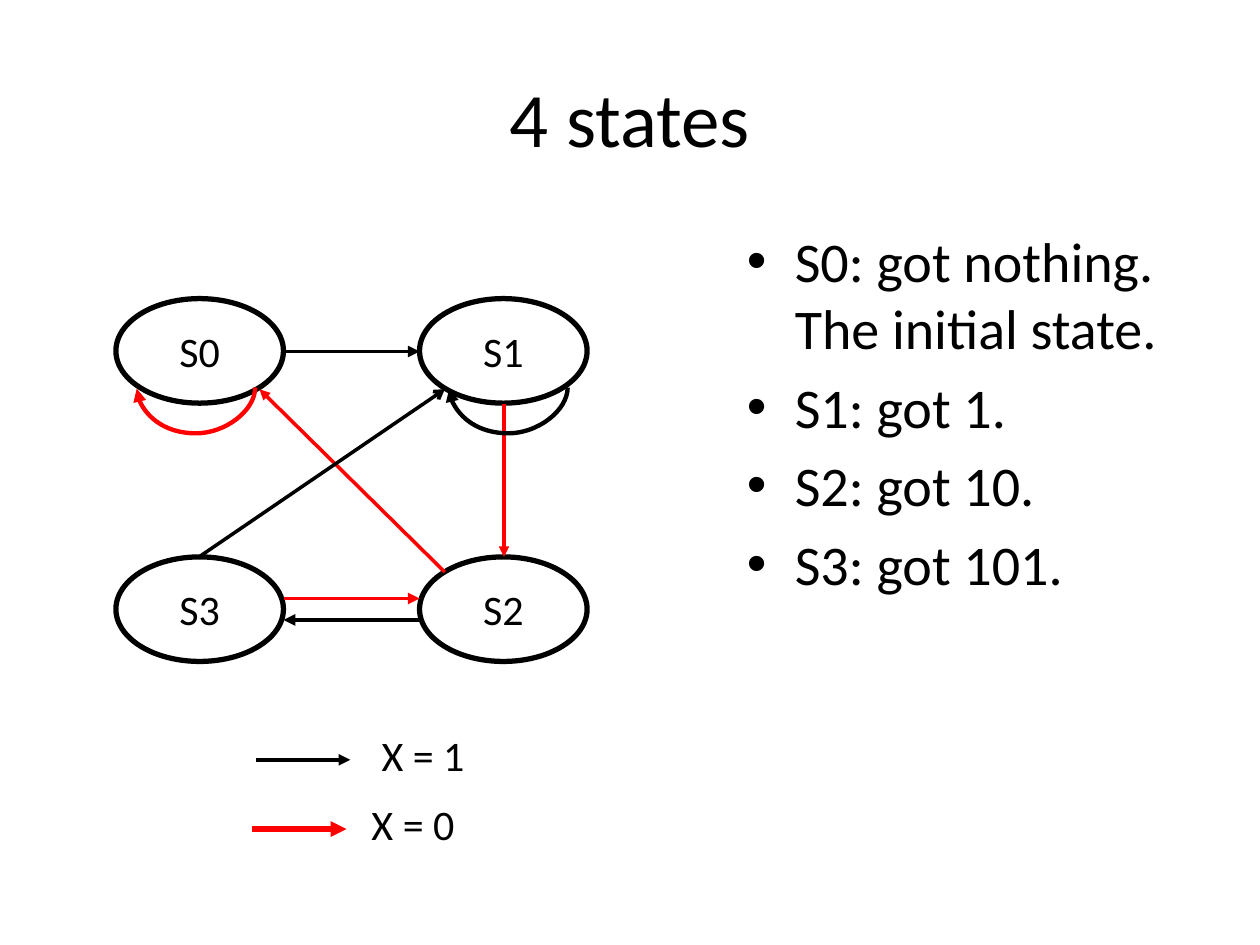
from lxml.etree import SubElement
from pptx import Presentation
from pptx.dml.color import RGBColor
from pptx.enum.shapes import MSO_CONNECTOR, MSO_SHAPE
from pptx.enum.text import MSO_ANCHOR, PP_ALIGN
from pptx.oxml.ns import qn
from pptx.util import Inches, Pt

COLORS = {name: RGBColor.from_string(value) for name, value in
          {"black": "000000", "red": "FF0000"}.items()}

presentation = Presentation()
presentation.slide_width, presentation.slide_height = Inches(10), Inches(7.5)
slide = presentation.slides.add_slide(presentation.slide_layouts[6])


def write(frame, lines, size, align=PP_ALIGN.LEFT, anchor=MSO_ANCHOR.TOP, wrap=False):
    frame.word_wrap = wrap
    frame.vertical_anchor = anchor
    frame.text = "\n".join(lines)
    for paragraph in frame.paragraphs:
        paragraph.alignment = align
        paragraph.font.name = "Calibri"
        paragraph.font.size = Pt(size)
        paragraph.font.color.rgb = COLORS["black"]


def add_arrow(start, end, color, width, head="triangle", kind=MSO_CONNECTOR.STRAIGHT):
    arrow = slide.shapes.add_connector(kind, *map(Inches, start + end))
    arrow.line.color.rgb = COLORS[color]
    arrow.line.width = Pt(width)
    SubElement(arrow.line._get_or_add_ln(), qn("a:tailEnd"), type=head)
    SubElement(arrow._element.spPr, qn("a:effectLst"))
    return arrow


# Title
title = slide.shapes.add_textbox(Inches(0.5), Inches(0.3), Inches(9), Inches(1.25))
write(title.text_frame, ["4 states"], 44, PP_ALIGN.CENTER, MSO_ANCHOR.MIDDLE, True)

# State descriptions
descriptions = slide.shapes.add_textbox(Inches(5.83), Inches(1.75), Inches(3.67), Inches(4.95))
write(descriptions.text_frame,
      ["S0: got nothing. The initial state.", "S1: got 1.", "S2: got 10.", "S3: got 101."],
      32, wrap=True)
for paragraph in descriptions.text_frame.paragraphs:
    paragraph.space_before = Pt(6.4)
    properties = paragraph._p.get_or_add_pPr()
    properties.set("marL", str(Inches(0.38)))
    properties.set("indent", str(-Inches(0.38)))
    SubElement(properties, qn("a:buFont"), typeface="Arial")
    SubElement(properties, qn("a:buChar"), char="•")
    # Bullet elements come before the default run properties
    properties.append(properties.find(qn("a:defRPr")))

# States
for name, left, top in [("S0", 0.92, 2.37), ("S1", 3.33, 2.37),
                        ("S2", 3.33, 4.42), ("S3", 0.92, 4.42)]:
    state = slide.shapes.add_shape(MSO_SHAPE.OVAL, Inches(left), Inches(top),
                                   Inches(1.33), Inches(0.83))
    state.shadow.inherit = False
    state.fill.background()
    state.line.color.rgb = COLORS["black"]
    state.line.width = Pt(3)
    write(state.text_frame, [name], 24, PP_ALIGN.CENTER, MSO_ANCHOR.MIDDLE)

# Transitions between states
add_arrow((2.25, 2.79), (3.33, 2.79), "black", 2.25)
add_arrow((4, 3.21), (4, 4.42), "red", 2)
add_arrow((3.33, 4.92), (2.25, 4.92), "black", 2.25)
add_arrow((3.53, 4.54), (2.06, 3.09), "red", 2)
add_arrow((2.25, 4.75), (3.33, 4.75), "red", 2.25)
add_arrow((1.58, 4.42), (3.53, 3.09), "black", 2, "arrow")

# Transitions back to the same state: a curve turned by 90 degrees,
# bulging 37 times its 0.01 inch width
for center, color in [(1.55, "red"), (4.03, "black")]:
    loop = add_arrow((center, 2.61), (center + 0.01, 3.55), color, 2.5,
                     kind=MSO_CONNECTOR.CURVE)
    properties = loop._element.spPr
    properties.find(qn("a:xfrm")).set("rot", str(90 * 60000))
    adjustments = properties.find(qn("a:prstGeom")).find(qn("a:avLst"))
    SubElement(adjustments, qn("a:gd"), name="adj1", fmla="val 3700000")

# Legend
for label, color, width, arrow_left, label_left, y in [
        ("X = 1", "black", 2.25, 2.03, 2.93, 6.03),
        ("X = 0", "red", 3, 2, 2.85, 6.58)]:
    add_arrow((arrow_left, y), (arrow_left + 0.75, y), color, width)
    legend = slide.shapes.add_textbox(Inches(label_left), Inches(y - 0.29),
                                      Inches(0.87), Inches(0.51))
    write(legend.text_frame, [label], 24)

presentation.save("out.pptx")
